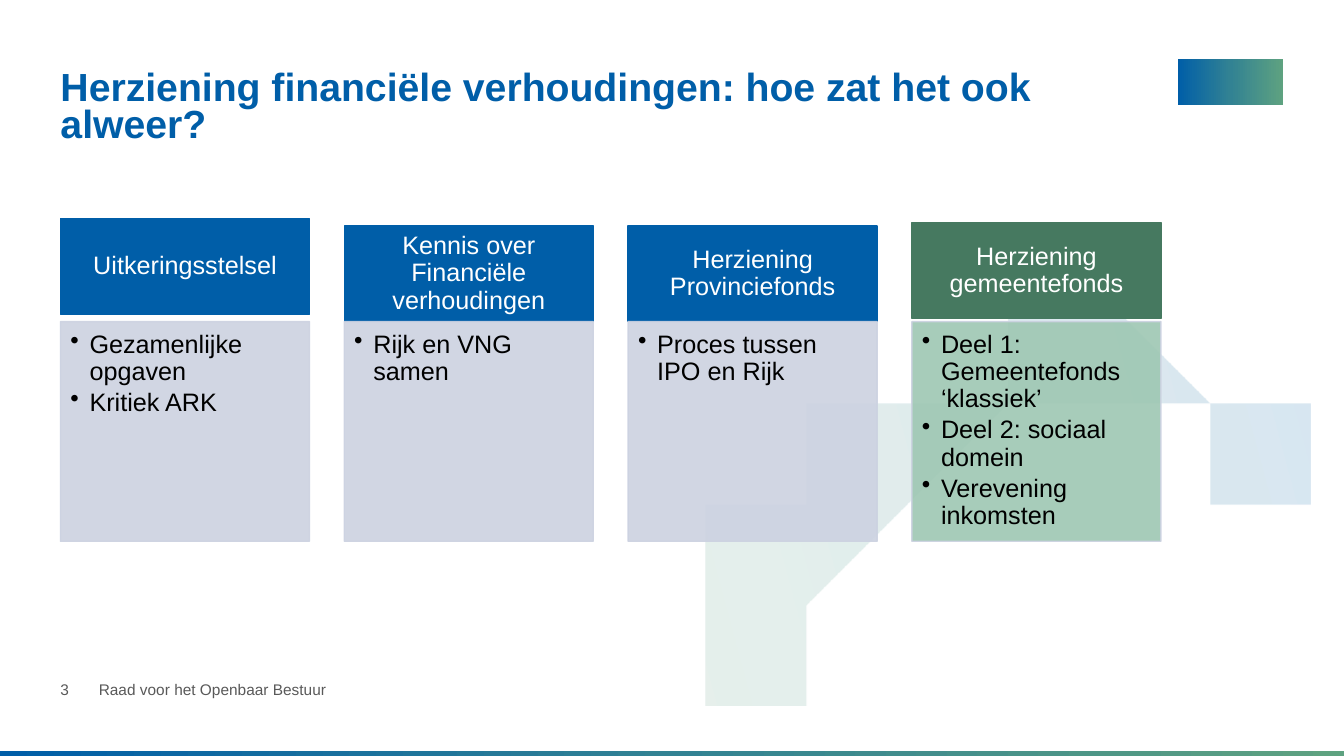
import copy
import math

from pptx import Presentation
from pptx import util as u
from pptx.dml.color import RGBColor
from pptx.enum import shapes, text
from pptx.oxml.ns import qn
from lxml import etree

BLUE, TEAL, GREEN = "005EA8", "328293", "5EA280"
GREY_BLUE, DARK_GREEN, LIGHT_GREEN = "CCD2E1", "467960", "9EC7B3"
WIDTH, HEIGHT, BAR_TOP = 13.33, 7.5, 7.45
CARD_LEFT, CARD_PITCH, CARD_WIDTH = 0.6, 2.815, 2.47
HEAD_HEIGHT, BODY_TOP, BODY_HEIGHT = 0.95, 3.19, 2.18

# Heading, heading top, heading colour, body colour, items
CARDS = [
    ("Uitkeringsstelsel", 2.17, BLUE, GREY_BLUE,
     ["Gezamenlijke opgaven", "Kritiek ARK"]),
    ("Kennis over Financiële verhoudingen", 2.24, BLUE, GREY_BLUE,
     ["Rijk en VNG samen"]),
    ("Herziening Provinciefonds", 2.24, BLUE, GREY_BLUE,
     ["Proces tussen IPO en Rijk"]),
    ("Herziening gemeentefonds", 2.21, DARK_GREEN, LIGHT_GREEN,
     ["Deel 1: Gemeentefonds ‘klassiek’", "Deel 2: sociaal domein",
      "Verevening inkomsten"]),
]


def rgb(value):
    return RGBColor.from_string(value)


def set_alpha(element, percent):
    """Give every colour inside the element the same opacity."""
    for colour in element.iter(qn("a:srgbClr")):
        etree.SubElement(colour, qn("a:alpha")).set("val", str(percent * 1000))


def fill_gradient(shape, colours, angle=0):
    shape.fill.gradient()
    shape.fill.gradient_angle = angle
    stops = next(shape._element.spPr.iter(qn("a:gsLst")))
    stops.insert(1, copy.deepcopy(stops[0]))
    for stop, colour, position in zip(shape.fill.gradient_stops, colours, (0, 0.5, 1)):
        stop.color.rgb = rgb(colour)
        stop.position = position
    shape.line.fill.background()
    shape.shadow.inherit = False


def add_bullet(para):
    props = para._p.get_or_add_pPr()
    indent = u.Inches(0.19)
    props.set("marL", str(indent))
    props.set("indent", str(-indent))
    etree.SubElement(props, qn("a:buChar")).set("char", "•")


def write(box, lines, size=18, colour="000000", bold=False, align=text.PP_ALIGN.LEFT,
          anchor=text.MSO_ANCHOR.MIDDLE, insets=(0, 0, 0, 0), spacing=1.0,
          after=0, bullets=False):
    frame = box.text_frame
    frame.word_wrap = True
    frame.auto_size = text.MSO_AUTO_SIZE.NONE
    frame.vertical_anchor = anchor
    (frame.margin_left, frame.margin_top,
     frame.margin_right, frame.margin_bottom) = map(u.Inches, insets)
    for number, line in enumerate(lines):
        para = frame.add_paragraph() if number else frame.paragraphs[0]
        para.alignment = align
        para.line_spacing = spacing
        para.space_before = u.Pt(0)
        para.space_after = u.Pt(after)
        if bullets:
            add_bullet(para)
        span = para.add_run()
        span.text = line
        span.font.name = "Arial"
        span.font.size = u.Pt(size)
        span.font.bold = bold
        span.font.color.rgb = rgb(colour)


def add_rectangle(page, left, top, width, height):
    return page.shapes.add_shape(shapes.MSO_SHAPE.RECTANGLE,
                                 *map(u.Inches, (left, top, width, height)))


def add_panel(page, left, top, height, fill, line, opacity=100):
    panel = add_rectangle(page, left, top, CARD_WIDTH, height)
    panel.fill.solid()
    panel.fill.fore_color.rgb = rgb(fill)
    panel.line.color.rgb = rgb(line)
    panel.line.width = u.Pt(1)
    panel.shadow.inherit = False
    if opacity < 100:
        set_alpha(panel._element.spPr, opacity)
    return panel


def arc(x, y, radius, steps=60):
    """Points of a circle from the bar at the bottom to the right slide edge."""
    start = math.pi - math.asin((BAR_TOP - y) / radius)
    end = 2 * math.pi - math.acos((WIDTH - x) / radius)
    angles = [start + (end - start) * step / steps for step in range(steps + 1)]
    return [(x + radius * math.cos(a), y + radius * math.sin(a)) for a in angles]


def add_ring(page):
    points = arc(10.55, 6.65, 3.29) + arc(10.79, 6.94, 2.76)[::-1]
    builder = page.shapes.build_freeform(*points[0], scale=u.Inches(1))
    builder.add_line_segments(points[1:], close=True)
    ring = builder.convert_to_shape()
    fill_gradient(ring, (GREEN, TEAL, BLUE), angle=15)
    set_alpha(ring._element.spPr, 15)


def add_label(page, line, left, width):
    box = page.shapes.add_textbox(*map(u.Inches, (left, 6.77, width, 0.14)))
    write(box, [line], size=11, colour="595959")


def add_card(page, left, heading, top, head_colour, body_colour, items):
    head = add_panel(page, left, top, HEAD_HEIGHT, head_colour, head_colour)
    write(head, [heading], colour="FFFFFF", align=text.PP_ALIGN.CENTER,
          insets=(0.14, 0.08, 0.14, 0.08), spacing=0.9)
    body = add_panel(page, left, BODY_TOP, BODY_HEIGHT, body_colour, GREY_BLUE, opacity=90)
    write(body, items, anchor=text.MSO_ANCHOR.TOP, insets=(0.1, 0.1, 0.14, 0.16),
          spacing=0.9, after=2.7, bullets=True)


def main():
    deck = Presentation()
    deck.slide_width, deck.slide_height = u.Inches(WIDTH), u.Inches(HEIGHT)
    page = deck.slides.add_slide(deck.slide_layouts[5])

    # Background decoration and logo block
    for area in ((11.68, 0.59, 1.05, 0.45), (0, BAR_TOP, WIDTH, HEIGHT - BAR_TOP)):
        fill_gradient(add_rectangle(page, *area), (BLUE, TEAL, GREEN))
    add_ring(page)

    # Title
    title = page.shapes.title
    title.left, title.top, title.width, title.height = map(
        u.Inches, (0.6, 0.61, 10.47, 0.94))
    write(title, ["Herziening financiële verhoudingen: hoe zat het ook alweer?"],
          size=28, colour=BLUE, bold=True, spacing=0.8)

    # Footer
    add_label(page, "Raad voor het Openbaar Bestuur", 0.98, 2.82)
    add_label(page, "3", 0.6, 0.35)

    # Cards
    for number, card in enumerate(CARDS):
        add_card(page, CARD_LEFT + number * CARD_PITCH, *card)

    deck.save("out.pptx")


if __name__ == "__main__":
    main()
